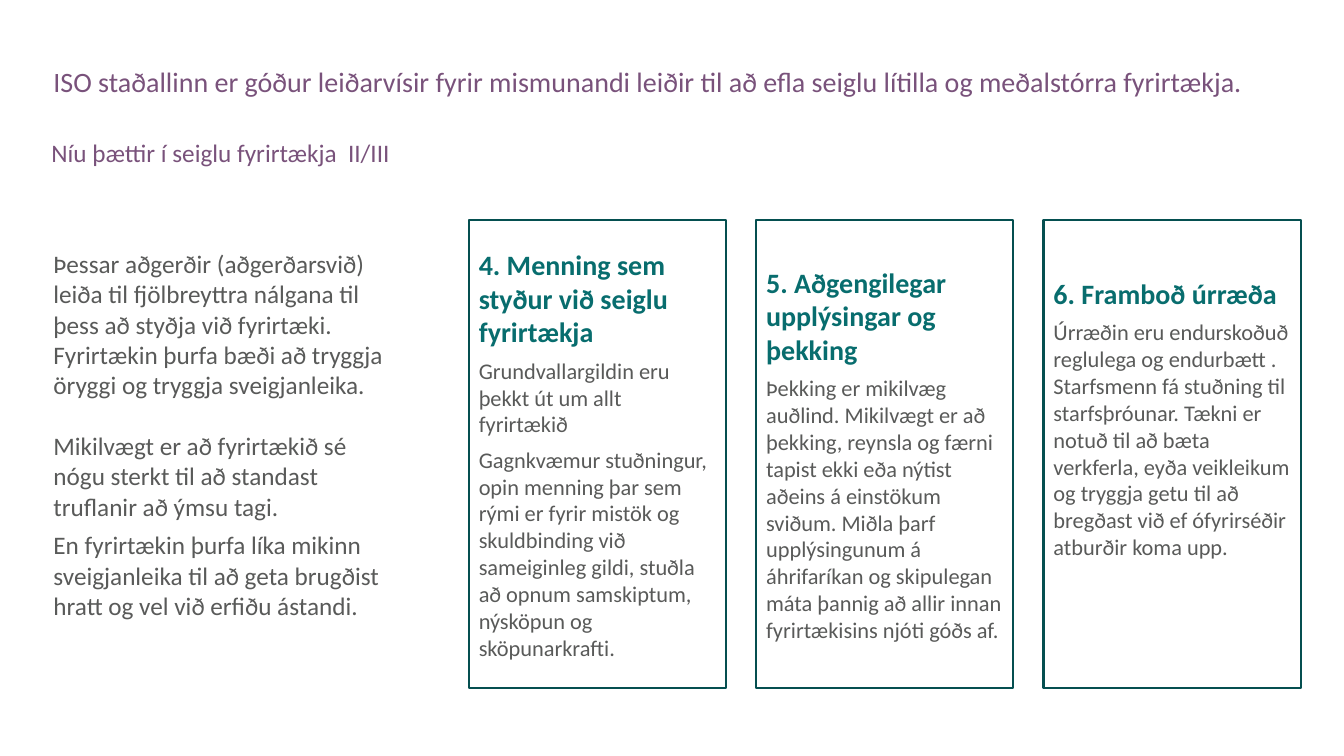
from dataclasses import dataclass

from lxml import etree
from pptx import Presentation
from pptx.dml.color import RGBColor
from pptx.enum.shapes import MSO_SHAPE
from pptx.enum.text import MSO_ANCHOR, MSO_AUTO_SIZE, PP_ALIGN
from pptx.oxml.ns import qn
from pptx.util import Inches, Pt

RECT = MSO_SHAPE.RECTANGLE
TOP, MIDDLE = MSO_ANCHOR.TOP, MSO_ANCHOR.MIDDLE
LEFT = PP_ALIGN.LEFT
NO_FIT = MSO_AUTO_SIZE.NONE
TWO_CONTENT = 3


@dataclass(frozen=True)
class Theme:
    font: str = "Calibri"
    purple: RGBColor = RGBColor(0x79, 0x52, 0x7B)
    grey: RGBColor = RGBColor(0x59, 0x5A, 0x59)
    teal: RGBColor = RGBColor(0x08, 0x6D, 0x6E)
    border: RGBColor = RGBColor(0x05, 0x4F, 0x50)
    large: Pt = Pt(20)
    medium: Pt = Pt(18)
    small: Pt = Pt(16)


THEME = Theme()
TITLE = {"size": THEME.large, "color": THEME.purple, "bold": False}
SUBTITLE = {"size": THEME.medium, "color": THEME.purple, "bold": False}
INTRO = {"size": THEME.medium, "color": THEME.grey, "bold": False}
CARD_HEAD = {"size": THEME.large, "color": THEME.teal, "bold": True}
CARD_BODY = {"size": THEME.small, "color": THEME.grey, "bold": False}

# Content: each paragraph is (text, format, points before)
TITLE_TEXT = ("ISO staðallinn er góður leiðarvísir fyrir mismunandi leiðir til að "
              "efla seiglu lítilla og meðalstórra fyrirtækja.")
SUBTITLE_TEXT = "Níu þættir í seiglu fyrirtækja  II/III"
INTRO_PARAGRAPHS = [
    ("Þessar aðgerðir (aðgerðarsvið) leiða til fjölbreyttra nálgana til þess að "
     "styðja við fyrirtæki. Fyrirtækin þurfa bæði að tryggja öryggi og tryggja "
     "sveigjanleika.", INTRO, 0),
    ("Mikilvægt er að fyrirtækið sé nógu sterkt til að standast truflanir að "
     "ýmsu tagi.", INTRO, 22),
    ("En fyrirtækin þurfa líka mikinn sveigjanleika til að geta brugðist hratt "
     "og vel við erfiðu ástandi.", INTRO, 6),
]
# Cards: heading, body paragraphs, bottom inset in inches
CARDS = [
    ("4. Menning sem styður við seiglu fyrirtækja",
     ["Grundvallargildin eru þekkt út um allt fyrirtækið",
      "Gagnkvæmur stuðningur, opin menning þar sem rými er fyrir mistök og "
      "skuldbinding við sameiginleg gildi, stuðla að opnum samskiptum, nýsköpun "
      "og sköpunarkrafti."], 0.05),
    ("5. Aðgengilegar upplýsingar og þekking",
     ["Þekking er mikilvæg auðlind. Mikilvægt er að þekking, reynsla og færni "
      "tapist ekki eða nýtist aðeins á einstökum sviðum. Miðla þarf "
      "upplýsingunum á áhrifaríkan og skipulegan máta þannig að allir innan "
      "fyrirtækisins njóti góðs af."], 0.05),
    ("6. Framboð úrræða",
     ["Úrræðin eru endurskoðuð reglulega og endurbætt . Starfsmenn fá stuðning "
      "til starfsþróunar. Tækni er notuð til að bæta verkferla, eyða veikleikum "
      "og tryggja getu til að bregðast við ef ófyrirséðir atburðir koma upp."],
     0.76),
]
CARD_LEFT, CARD_TOP, CARD_WIDTH, CARD_HEIGHT, CARD_STEP = 4.65, 2.18, 2.55, 4.65, 2.85


def set_attributes(target, values):
    for name, value in values.items():
        setattr(target, name, value)


def remove_bullet(p):
    pPr = p._p.get_or_add_pPr()
    pPr.set("marL", "0")
    pPr.set("indent", "0")
    etree.SubElement(pPr, qn("a:buNone"))


def write_text(sp, paragraphs, anchor, line_spacing=1.0, bottom=0.05):
    tf = sp.text_frame
    set_attributes(tf, {
        "word_wrap": True, "auto_size": NO_FIT, "vertical_anchor": anchor,
        "margin_left": Inches(0.1), "margin_right": Inches(0.1),
        "margin_top": Inches(0.05), "margin_bottom": Inches(bottom)})
    for i, (text, style, before) in enumerate(paragraphs):
        p = tf.add_paragraph() if i else tf.paragraphs[0]
        if sp.is_placeholder:
            remove_bullet(p)
        set_attributes(p, {"alignment": LEFT, "line_spacing": line_spacing,
                           "space_before": Pt(before), "space_after": Pt(0)})
        r = p.add_run()
        r.text = text
        set_attributes(r.font, {"name": THEME.font, "size": style["size"],
                                "bold": style["bold"]})
        r.font.color.rgb = style["color"]


def fill_placeholder(sp, box, paragraphs, anchor=TOP, line_spacing=0.9):
    set_attributes(sp, dict(zip(("left", "top", "width", "height"),
                                map(Inches, box))))
    write_text(sp, paragraphs, anchor, line_spacing)


def add_card(s, column, heading, body, bottom):
    sp = s.shapes.add_shape(
        RECT, Inches(CARD_LEFT + column * CARD_STEP), Inches(CARD_TOP),
        Inches(CARD_WIDTH), Inches(CARD_HEIGHT))
    sp.shadow.inherit = False
    sp.fill.background()
    sp.line.color.rgb = THEME.border
    sp.line.width = Pt(1.5)
    paragraphs = [(heading, CARD_HEAD, 0)]
    paragraphs += [(text, CARD_BODY, 6) for text in body]
    write_text(sp, paragraphs, MIDDLE, bottom=bottom)


def main():
    prs = Presentation()
    prs.slide_width, prs.slide_height = Inches(13.33), Inches(7.5)
    s = prs.slides.add_slide(prs.slide_layouts[TWO_CONTENT])

    # Heading lines and introduction
    title, subtitle, intro = (s.placeholders[i] for i in range(3))
    fill_placeholder(title, (0.43, 0.63, 12.54, 0.64), [(TITLE_TEXT, TITLE, 0)])
    fill_placeholder(subtitle, (0.41, 1.35, 12.56, 0.28),
                     [(SUBTITLE_TEXT, SUBTITLE, 0)])
    fill_placeholder(intro, (0.43, 1.79, 3.49, 5.04), INTRO_PARAGRAPHS,
                     MIDDLE, 1.0)

    # Row of cards
    for column, card in enumerate(CARDS):
        add_card(s, column, *card)

    prs.save("out.pptx")


if __name__ == "__main__":
    main()
